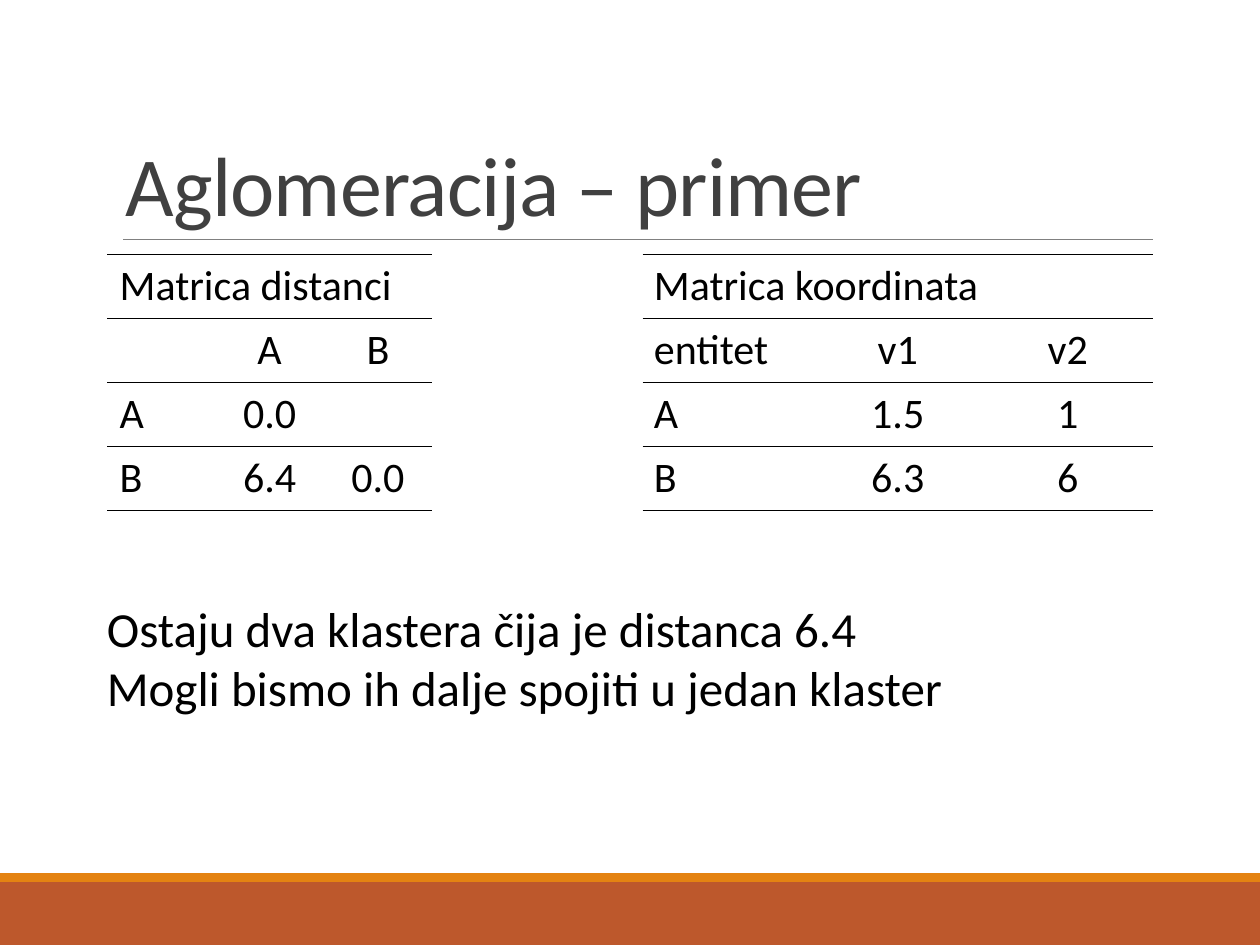
from collections import namedtuple
from dataclasses import dataclass

from lxml import etree
from pptx import Presentation
from pptx.dml.color import RGBColor
from pptx.enum.shapes import MSO_CONNECTOR, MSO_SHAPE
from pptx.enum.text import MSO_ANCHOR, MSO_AUTO_SIZE, PP_ALIGN
from pptx.oxml.ns import qn
from pptx.util import Inches, Pt

Box = namedtuple("Box", "left top width height")


@dataclass(frozen=True)
class Theme:
    font: str = "Calibri"
    ink: str = "000000"
    title_ink: str = "404040"
    rule: str = "808080"
    band: str = "BD582C"
    stripe: str = "E48312"
    title_size: int = 48
    body_size: int = 28
    table_size: int = 24


THEME = Theme()


def inches(box):
    return [Inches(length) for length in box]


def color(value):
    return RGBColor.from_string(value)


def style_text(frame, size, ink):
    for para in frame.paragraphs:
        for span in para.runs:
            span.font.name = THEME.font
            span.font.size = Pt(size)
            span.font.bold = False
            span.font.color.rgb = color(ink)


def add_bar(page, box, fill):
    bar = page.shapes.add_shape(MSO_SHAPE.RECTANGLE, *inches(box))
    bar.shadow.inherit = False
    bar.fill.solid()
    bar.fill.fore_color.rgb = color(fill)
    bar.line.fill.background()


def add_footer(page, box):
    """Place a band with a thin stripe along its top."""
    stripe = 0.07
    add_bar(page, Box(box.left, box.top + stripe, box.width, box.height - stripe), THEME.band)
    add_bar(page, Box(box.left, box.top, box.width, stripe), THEME.stripe)


def add_title(page, box, text):
    """Place the title at the foot of the box, with a rule under it."""
    bottom, right = box.top + box.height, box.left + box.width
    rule = page.shapes.add_connector(
        MSO_CONNECTOR.STRAIGHT, *inches((box.left + 0.08, bottom, right, bottom)))
    rule.line.color.rgb = color(THEME.rule)
    rule.line.width = Pt(0.5)
    etree.SubElement(rule.line._get_or_add_ln().getparent(), qn("a:effectLst"))

    frame = page.shapes.add_textbox(*inches(box)).text_frame
    frame.word_wrap = True
    frame.vertical_anchor = MSO_ANCHOR.BOTTOM
    frame.text = text
    para = frame.paragraphs[0]
    para.line_spacing = 0.85
    style_text(frame, THEME.title_size, THEME.title_ink)
    para.runs[0].font._element.set("spc", "-50")


def rule_cell(cell):
    """Draw lines above and below the cell, and none at its sides."""
    props = cell._tc.get_or_add_tcPr()
    for side in ("lnL", "lnR"):
        etree.SubElement(etree.SubElement(props, qn(f"a:{side}"), w="0"), qn("a:noFill"))
    for side in ("lnT", "lnB"):
        line = etree.SubElement(props, qn(f"a:{side}"), w=str(Pt(1)))
        fill = etree.SubElement(line, qn("a:solidFill"))
        etree.SubElement(fill, qn("a:srgbClr"), val=THEME.ink)
    cell.fill.background()


def add_matrix(page, box, heading, rows, side_inset):
    """Place a table whose first row is one heading across all columns."""
    columns = len(rows[0])
    grid = [[heading] + [""] * (columns - 1)] + rows
    table = page.shapes.add_table(len(grid), columns, *inches(box)).table
    table.first_row = table.horz_banding = False
    for row, values in zip(table.rows, grid):
        for index, (cell, value) in enumerate(zip(row.cells, values)):
            rule_cell(cell)
            cell.margin_left = cell.margin_right = Inches(side_inset)
            cell.vertical_anchor = MSO_ANCHOR.MIDDLE
            cell.text = value
            cell.text_frame.paragraphs[0].alignment = PP_ALIGN.CENTER if index else PP_ALIGN.LEFT
            style_text(cell.text_frame, THEME.table_size, THEME.ink)
    table.cell(0, 0).merge(table.cell(0, columns - 1))


def add_conclusion(page, box, lines):
    frame = page.shapes.add_textbox(*inches(box)).text_frame
    frame.word_wrap = False
    frame.auto_size = MSO_AUTO_SIZE.SHAPE_TO_FIT_TEXT
    frame.text = "\n".join(lines)
    style_text(frame, THEME.body_size, THEME.ink)


def main():
    deck = Presentation()
    deck.slide_width, deck.slide_height = Inches(10), Inches(7.5)
    page = deck.slides.add_slide(deck.slide_layouts[6])

    add_footer(page, Box(0, 6.93, 10, 0.57))
    add_title(page, Box(0.9, 0.31, 8.25, 1.59), "Aglomeracija – primer")
    add_matrix(page, Box(0.85, 2.02, 2.58, 2.03), "Matrica distanci",
               [["", "A", "B"], ["A", "0.0", ""], ["B", "6.4", "0.0"]], 0.1)
    add_matrix(page, Box(5.1, 2.02, 4.05, 2.03), "Matrica koordinata",
               [["entitet", "v1", "v2"], ["A", "1.5", "1"], ["B", "6.3", "6"]], 0.09)
    add_conclusion(page, Box(0.75, 4.7, 6.91, 1.04),
                   ["Ostaju dva klastera čija je distanca 6.4",
                    "Mogli bismo ih dalje spojiti u jedan klaster"])
    deck.save("out.pptx")


if __name__ == "__main__":
    main()
